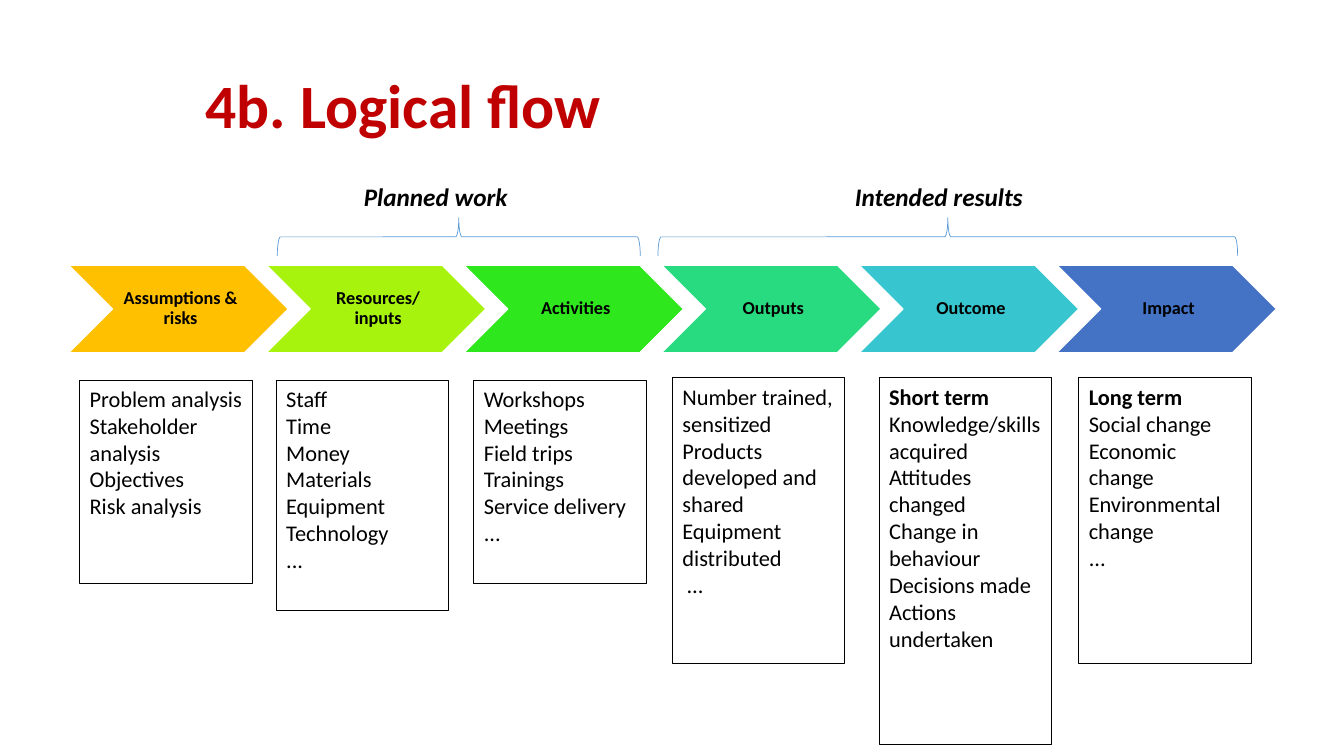
import pptx
import pptx.util
import pptx.dml.color
import pptx.enum.shapes
import pptx.enum.text

Inches = pptx.util.Inches
Pt = pptx.util.Pt
RGBColor = pptx.dml.color.RGBColor
MSO_SHAPE = pptx.enum.shapes.MSO_SHAPE
PP_ALIGN = pptx.enum.text.PP_ALIGN
MSO_ANCHOR = pptx.enum.text.MSO_ANCHOR

BLACK = RGBColor(0x00, 0x00, 0x00)
WHITE = RGBColor(0xFF, 0xFF, 0xFF)
TITLE_RED = RGBColor(0xC0, 0x00, 0x00)
BRACE_BLUE = RGBColor(0x5B, 0x9B, 0xD5)
AMBER = RGBColor(0xFF, 0xC0, 0x00)
LIME = RGBColor(0xA7, 0xF3, 0x0E)
GREEN = RGBColor(0x2E, 0xE7, 0x1C)
EMERALD = RGBColor(0x29, 0xDB, 0x80)
TURQUOISE = RGBColor(0x37, 0xC6, 0xCF)
BLUE = RGBColor(0x44, 0x72, 0xC4)

CHEVRON_LEFT, CHEVRON_PITCH = 0.68, 1.96

# Stage name, colour, box left, box top, box height, bold heading, items
STAGES = [
    ("Assumptions & risks", AMBER, 0.79, 3.77, 2.02, None,
     ["Problem analysis", "Stakeholder analysis", "Objectives", "Risk analysis"]),
    ("Resources/inputs", LIME, 2.74, 3.77, 2.29, None,
     ["Staff", "Time", "Money", "Materials", "Equipment", "Technology", "..."]),
    ("Activities", GREEN, 4.7, 3.77, 2.02, None,
     ["Workshops", "Meetings", "Field trips", "Trainings", "Service delivery", "..."]),
    ("Outputs", EMERALD, 6.67, 3.75, 2.83, None,
     ["Number trained, sensitized", "Products developed and shared",
      "Equipment distributed", " …"]),
    ("Outcome", TURQUOISE, 8.72, 3.75, 3.64, "Short term",
     ["Knowledge/skills acquired", "Attitudes changed", "Change in behaviour",
      "Decisions made", "Actions undertaken"]),
    ("Impact", BLUE, 10.7, 3.75, 2.83, "Long term",
     ["Social change", "Economic change", "Environmental change", "..."]),
]

# Label, label left, brace centre, brace span
PHASES = [
    ("Planned work", 3.51, 4.55, 3.6),
    ("Intended results", 8.38, 9.4, 5.75),
]


class FlowSlide:
    font_name = "Calibri"

    def __init__(self, presentation):
        self.slide = presentation.slides.add_slide(presentation.slide_layouts[5])

    def add_run(self, paragraph, text, size, color=BLACK, bold=False, italic=False):
        run = paragraph.add_run()
        run.text = text
        run.font.name = self.font_name
        run.font.size = Pt(size)
        run.font.bold = bold
        run.font.italic = italic
        run.font.color.rgb = color

    def add_outlined_shape(self, preset, left, top, width, height, line_color,
                           line_width, fill=None):
        shape = self.slide.shapes.add_shape(
            preset, Inches(left), Inches(top), Inches(width), Inches(height))
        shape.shadow.inherit = False
        if fill is None:
            shape.fill.background()
        else:
            shape.fill.solid()
            shape.fill.fore_color.rgb = fill
        shape.line.color.rgb = line_color
        shape.line.width = Pt(line_width)
        return shape

    def set_title(self, text):
        title = self.slide.shapes.title
        title.left, title.top = Inches(1.94), Inches(0.35)
        title.width, title.height = Inches(9.45), Inches(1.45)
        title.text_frame.vertical_anchor = MSO_ANCHOR.MIDDLE
        paragraph = title.text_frame.paragraphs[0]
        paragraph.alignment = PP_ALIGN.LEFT
        paragraph.line_spacing = 0.9
        self.add_run(paragraph, text, 44, TITLE_RED, bold=True)

    def add_chevron(self, left, text, fill):
        chevron = self.add_outlined_shape(
            MSO_SHAPE.CHEVRON, left, 2.63, 2.18, 0.87, WHITE, 1, fill)
        frame = chevron.text_frame
        frame.word_wrap = True
        frame.vertical_anchor = MSO_ANCHOR.MIDDLE
        frame.margin_left = Inches(0.06)
        frame.margin_top = frame.margin_right = frame.margin_bottom = Inches(0.02)
        paragraph = frame.paragraphs[0]
        paragraph.alignment = PP_ALIGN.CENTER
        paragraph.line_spacing = 0.9
        self.add_run(paragraph, text, 13, bold=True)

    def add_brace(self, center, span):
        """Draw a brace that opens downwards, by turning a left brace a quarter."""
        depth, middle = 0.38, 2.35
        brace = self.add_outlined_shape(
            MSO_SHAPE.LEFT_BRACE, center - depth / 2, middle - span / 2,
            depth, span, BRACE_BLUE, 0.5)
        brace.rotation = 90

    def add_label(self, left, text):
        label = self.slide.shapes.add_textbox(
            Inches(left), Inches(1.75), Inches(2.06), Inches(0.41))
        label.text_frame.word_wrap = True
        self.add_run(label.text_frame.paragraphs[0], text, 18, bold=True, italic=True)

    def add_list_box(self, left, top, height, heading, items):
        box = self.add_outlined_shape(
            MSO_SHAPE.RECTANGLE, left, top, 1.71, height, BLACK, 0.75)
        frame = box.text_frame
        frame.word_wrap = True
        frame.vertical_anchor = MSO_ANCHOR.TOP
        lines = [heading] + items if heading else items
        for index, line in enumerate(lines):
            paragraph = frame.add_paragraph() if index else frame.paragraphs[0]
            paragraph.alignment = PP_ALIGN.LEFT
            self.add_run(paragraph, line, 16, bold=line == heading)


def main():
    presentation = pptx.Presentation()
    presentation.slide_width = Inches(13.33)
    presentation.slide_height = Inches(7.5)

    flow = FlowSlide(presentation)
    flow.set_title("4b. Logical flow")
    for index, (name, color, *_) in enumerate(STAGES):
        flow.add_chevron(CHEVRON_LEFT + index * CHEVRON_PITCH, name, color)
    for label, label_left, center, span in PHASES:
        flow.add_brace(center, span)
        flow.add_label(label_left, label)
    for _, _, left, top, height, heading, items in STAGES:
        flow.add_list_box(left, top, height, heading, items)

    presentation.save("out.pptx")


if __name__ == "__main__":
    main()
